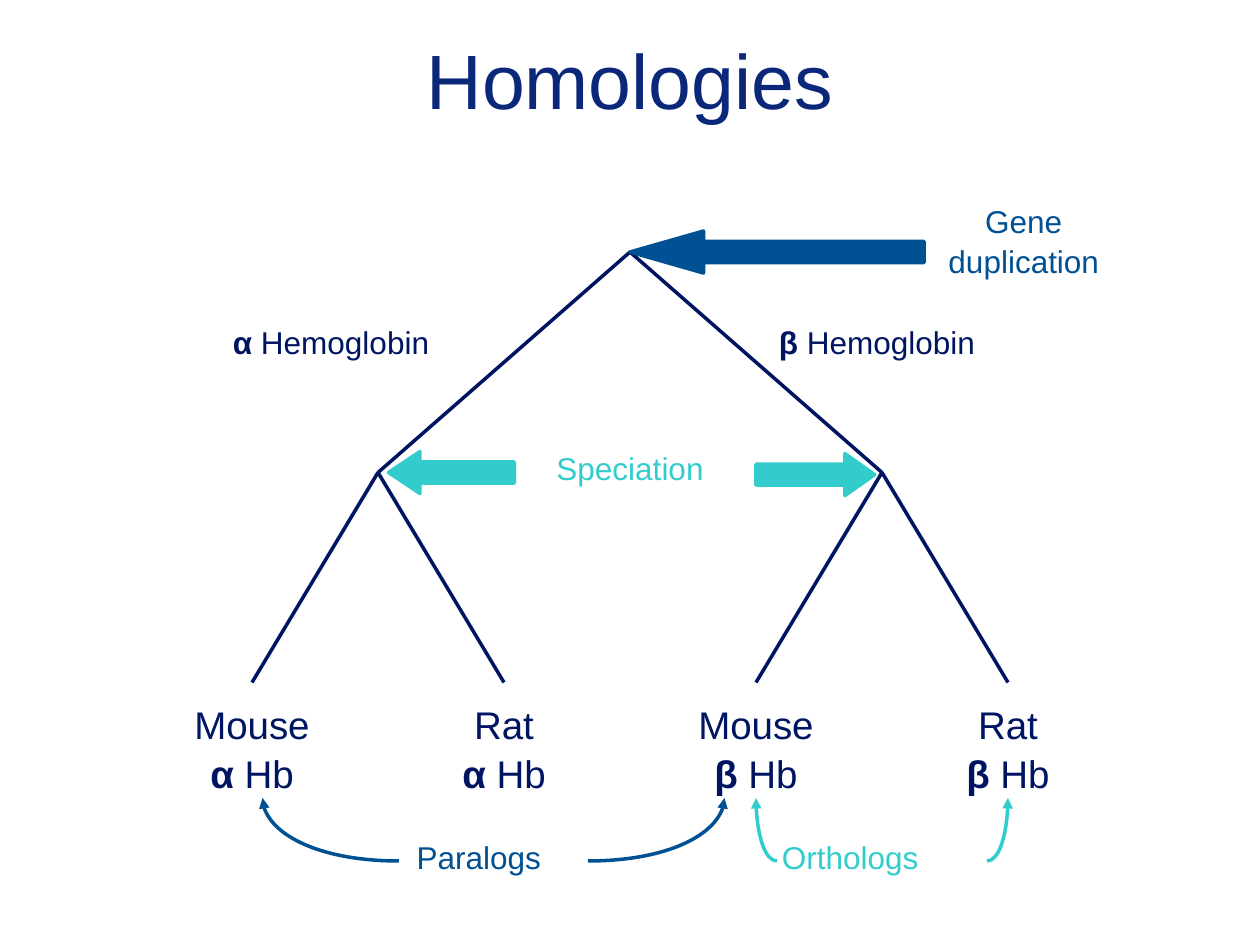
from lxml import etree
from pptx import Presentation, util as u
from pptx.dml.color import RGBColor
from pptx.enum import shapes, text
from pptx.oxml.ns import qn

NAVY = RGBColor(0x00, 0x15, 0x61)
TITLE = RGBColor(0x0A, 0x27, 0x79)
BLUE = RGBColor(0x00, 0x51, 0x94)
TEAL = RGBColor(0x33, 0xCC, 0xCC)
CELL = u.Inches(1) // 12  # 120 columns by 90 rows
LEFT, MID = text.PP_ALIGN.LEFT, text.PP_ALIGN.CENTER
GREEK = "αβ"


def cells(*nums):
    return [round(n * CELL) for n in nums]


class Sheet:
    """Draws on one slide; all lengths are in grid cells."""
    font = "Arial"
    width = u.Pt(2)

    def __init__(self, deck):
        self.page = deck.slides.add_slide(deck.slide_layouts[6]).shapes

    def label(self, box, lines, size, color, align=MID, space=1.05,
              anchor=text.MSO_ANCHOR.TOP):
        """Write lines of text, with Greek letters in bold."""
        frame = self.page.add_textbox(*cells(*box)).text_frame
        frame.word_wrap = True
        frame.vertical_anchor = anchor
        for i, line in enumerate(lines):
            para = frame.add_paragraph() if i else frame.paragraphs[0]
            para.alignment, para.line_spacing = align, space
            parts = [line[0], line[1:]] if line[0] in GREEK else [line]
            for part in parts:
                run = para.add_run()
                run.text = part
                form = {"name": self.font, "size": u.Pt(size),
                        "bold": part in GREEK}
                for key, val in form.items():
                    setattr(run.font, key, val)
                run.font.color.rgb = color

    def stroke(self, item, color):
        item.line.color.rgb = color
        item.line.width = self.width

    def branch(self, start, end):
        line = self.page.add_connector(
            shapes.MSO_CONNECTOR.STRAIGHT, *cells(*start, *end))
        self.stroke(line, NAVY)
        etree.SubElement(line._element.spPr, qn("a:effectLst"))

    def arrow(self, box, head, color, turn=0):
        item = self.page.add_shape(shapes.MSO_SHAPE.LEFT_ARROW, *cells(*box))
        item.shadow.inherit = False
        item.adjustments[0], item.adjustments[1] = 0.5, head
        item.rotation = turn
        item.fill.solid()
        item.fill.fore_color.rgb = color
        self.stroke(item, color)

    def curve(self, start, end, color):
        """Draw a quarter ellipse, level at start, with an arrowhead at end."""
        pen = self.page.build_freeform(*cells(*start), scale=1.0)
        pen.add_line_segments([cells(*end)], close=False)
        item = pen.convert_to_shape()
        item.shadow.inherit = False
        item.fill.background()
        self.stroke(item, color)
        etree.SubElement(item.line._get_or_add_ln(), qn("a:tailEnd"),
                         type="triangle")
        geom = item._element.spPr
        first, last = [[int(pt.get(k)) for k in "xy"]
                       for pt in geom.iter(qn("a:pt"))]
        (x, y), (far, top) = first, last
        bend = [(x + 0.55 * (far - x), y), (far, y + 0.45 * (top - y)), last]
        seg = next(geom.iter(qn("a:lnTo")))
        cubic = etree.Element(qn("a:cubicBezTo"))
        for px, py in bend:
            etree.SubElement(cubic, qn("a:pt"), x=str(round(px)),
                             y=str(round(py)))
        seg.getparent().replace(seg, cubic)


def main():
    deck = Presentation()
    deck.slide_width, deck.slide_height = cells(120, 90)
    sheet = Sheet(deck)
    sheet.label((9, 0, 102, 15), ["Homologies"], 44, TITLE, space=1,
                anchor=text.MSO_ANCHOR.MIDDLE)

    root = (60, 24)
    for node, gene, left in ((36, "α", 21), (84, "β", 73)):
        fork = (node, 45)
        sheet.branch(fork, root)
        sheet.label((left, 30, 27.5, 6.8), [gene + " Hemoglobin"], 18, NAVY,
                    LEFT)
        for leaf, name in ((node - 12, "Mouse"), (node + 12, "Rat")):
            sheet.branch((leaf, 65), fork)
            sheet.label((leaf - 16, 66, 32, 11.4), [name, gene + " Hb"], 22,
                        NAVY)

    sheet.arrow((60, 22, 28, 4), 1.75, BLUE)
    sheet.label((86.25, 18.5, 22.5, 12.4), ["Gene", "duplication"], 18, BLUE)
    sheet.arrow((37, 43, 12, 4), 0.75, TEAL)
    sheet.arrow((72, 43.2, 11.3, 4), 0.71, TEAL, 180)
    sheet.label((49, 42, 22, 6.8), ["Speciation"], 18, TEAL)

    for name, left, wide, color, bends in (
            ("Paralogs", 38.5, 17.8, BLUE, ((38, 25), (56, 69))),
            ("Orthologs", 73.3, 21.1, TEAL, ((74, 72), (94, 96)))):
        sheet.label((left, 79, wide, 6.8), [name], 18, color, LEFT)
        for start, end in bends:
            sheet.curve((start, 82), (end, 76), color)
    deck.save("out.pptx")


if __name__ == "__main__":
    main()
